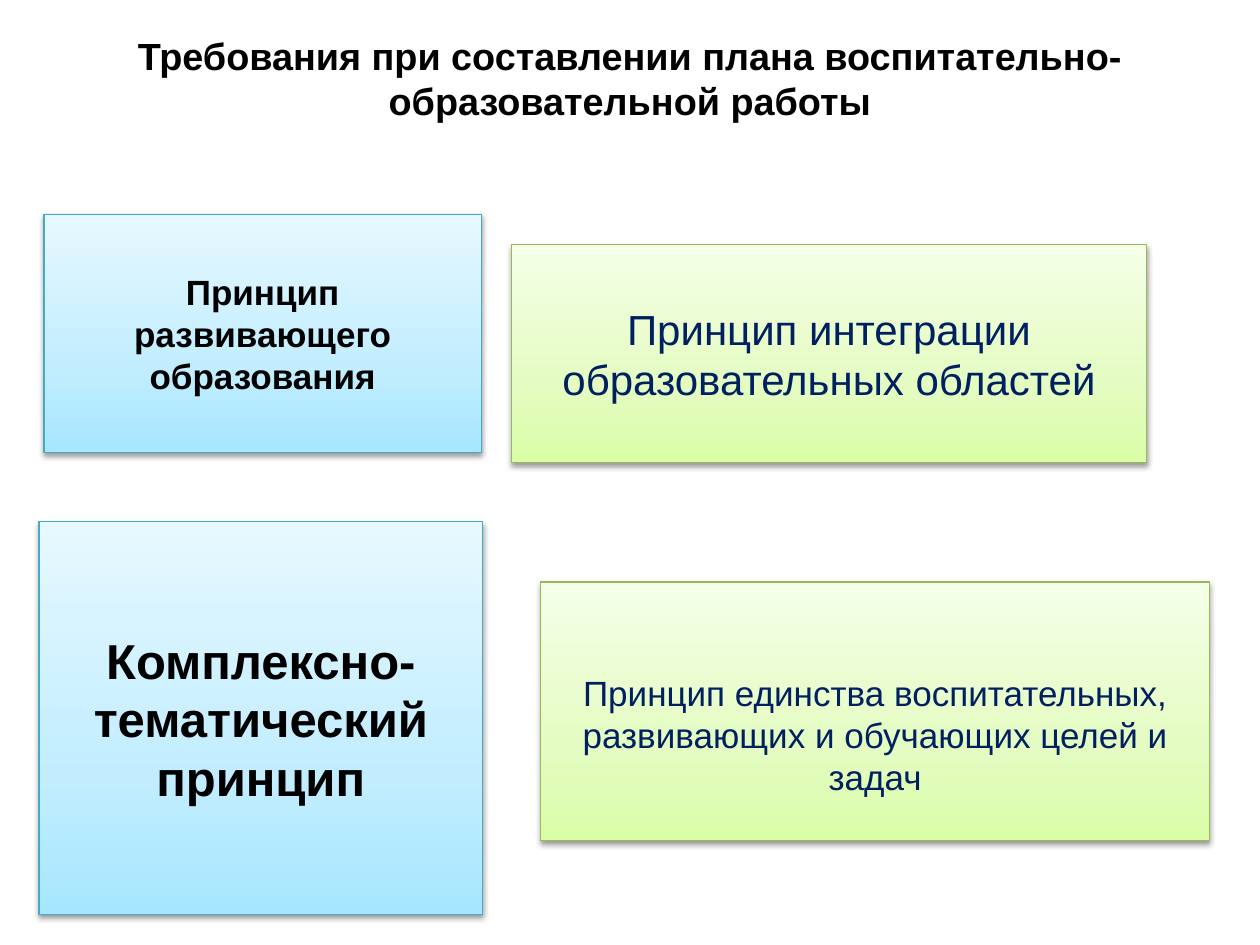
import copy

import pptx
import pptx.dml.color
import pptx.enum.shapes
import pptx.enum.text
import pptx.oxml
import pptx.oxml.ns
import pptx.util

Inches = pptx.util.Inches
Pt = pptx.util.Pt
qn = pptx.oxml.ns.qn

# Gradient stops run from the bottom edge to the top
BLUE = {"stops": [(0, "A7E6FF"), (0.35, "C1EDFF"), (1, "E7F8FF")], "line": "46AAC5"}
GREEN = {"stops": [(0, "DAFDA7"), (0.35, "E4FCC2"), (1, "F5FFE7")], "line": "98B955"}
BLACK = "000000"
NAVY = "002060"

SHADOW = (
    f'<a:outerShdw {pptx.oxml.ns.nsdecls("a")} blurRad="{Pt(3.1)}" dist="{Pt(1.6)}" '
    f'dir="5400000" rotWithShape="0"><a:srgbClr val="{BLACK}">'
    '<a:alpha val="38000"/></a:srgbClr></a:outerShdw>'
)


def rgb(value):
    return pptx.dml.color.RGBColor.from_string(value)


class SlideBuilder:
    font = "Arial"

    def __init__(self, slide):
        self.slide = slide

    def set_text(self, shape, text, size, color, bold):
        frame = shape.text_frame
        frame.word_wrap = True
        frame.vertical_anchor = pptx.enum.text.MSO_ANCHOR.MIDDLE
        frame.text = text
        paragraph = frame.paragraphs[0]
        paragraph.alignment = pptx.enum.text.PP_ALIGN.CENTER
        for run in paragraph.runs:
            run.font.name = self.font
            run.font.size = Pt(size)
            run.font.bold = bold
            run.font.color.rgb = rgb(color)

    def title(self, box, text, size):
        heading = self.slide.shapes.add_textbox(*map(Inches, box))
        self.set_text(heading, text, size, BLACK, True)

    def card(self, box, text, size, palette, color, bold=False, top_inset=0.05):
        card = self.slide.shapes.add_shape(
            pptx.enum.shapes.MSO_SHAPE.RECTANGLE, *map(Inches, box))
        self.gradient(card, palette["stops"])
        card.line.color.rgb = rgb(palette["line"])
        card.line.width = Pt(0.75)
        self.shadow(card)
        card.text_frame.margin_top = Inches(top_inset)
        self.set_text(card, text, size, color, bold)

    def gradient(self, shape, stops):
        shape.fill.gradient()
        shape.fill.gradient_angle = 90
        stop_list = shape.element.spPr.find(qn("a:gradFill")).find(qn("a:gsLst"))
        while len(stop_list) < len(stops):
            stop_list.append(copy.deepcopy(stop_list[-1]))
        for stop, (position, color) in zip(shape.fill.gradient_stops, stops):
            stop.position = position
            stop.color.rgb = rgb(color)

    def shadow(self, shape):
        shape.shadow.inherit = False
        effects = shape.element.spPr.find(qn("a:effectLst"))
        effects.append(pptx.oxml.parse_xml(SHADOW))


def main():
    deck = pptx.Presentation()
    deck.slide_width = Inches(10)
    deck.slide_height = Inches(7.5)
    builder = SlideBuilder(deck.slides.add_slide(deck.slide_layouts[6]))

    # Heading
    builder.title((0.5, 0.3, 9, 0.64),
                  "Требования при составлении плана воспитательно-образовательной работы",
                  21.6)

    # Upper pair of principles
    builder.card((0.35, 1.7, 3.47, 1.89), "Принцип развивающего образования",
                 20, BLUE, BLACK, bold=True)
    builder.card((4.06, 1.94, 5.04, 1.73), "Принцип интеграции образовательных областей",
                 24, GREEN, NAVY)

    # Lower pair of principles
    builder.card((0.31, 4.14, 3.52, 3.12), "Комплексно-тематический принцип",
                 28, BLUE, BLACK, bold=True)
    builder.card((4.29, 4.62, 5.31, 2.05),
                 "Принцип единства воспитательных, развивающих и обучающих целей и задач",
                 20, GREEN, NAVY, top_inset=0.42)

    deck.save("out.pptx")


if __name__ == "__main__":
    main()
